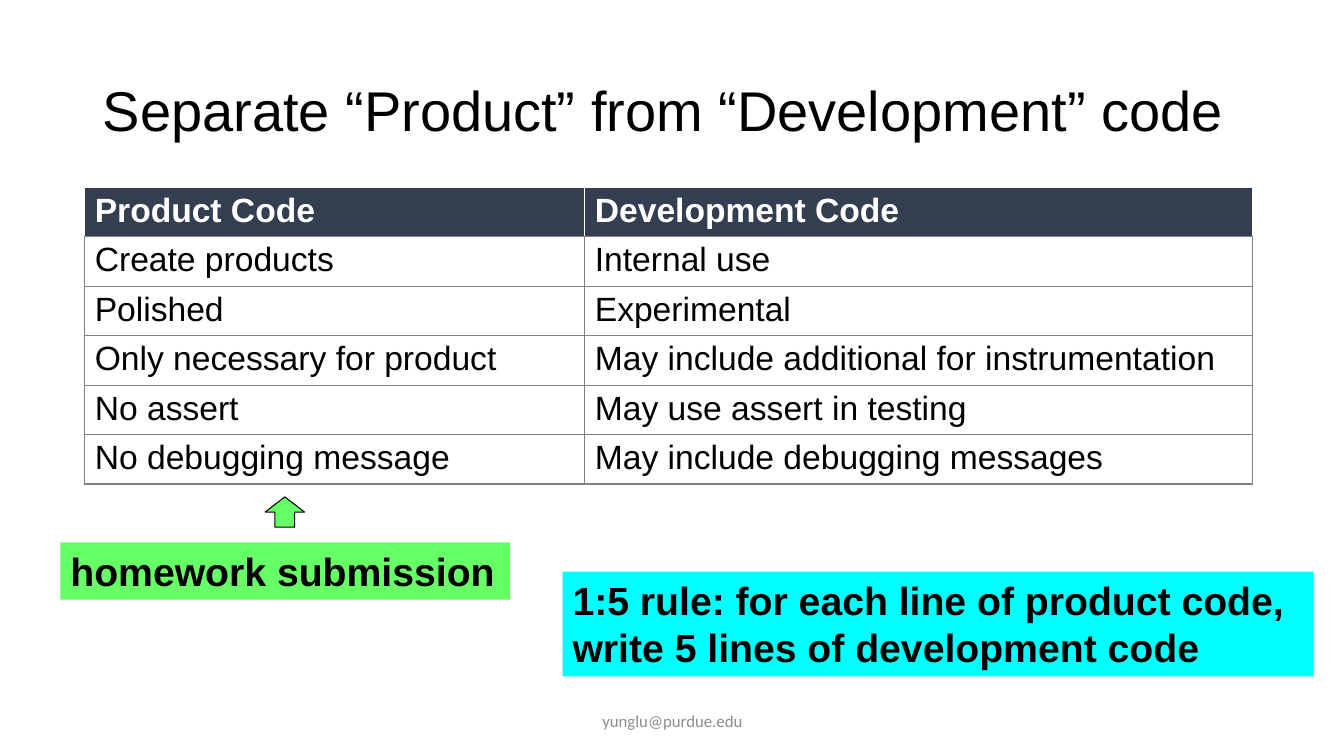
from pptx import Presentation
from pptx.dml.color import RGBColor
from pptx.enum.shapes import MSO_SHAPE as Shape
from pptx.enum.text import MSO_ANCHOR as Anchor, PP_ALIGN as Align
from pptx.oxml import parse_xml
from pptx.oxml.ns import nsdecls
from pptx.util import Inches, Pt

BLACK = RGBColor(0, 0, 0)
WHITE = RGBColor(255, 255, 255)
GRAY = RGBColor(0x80, 0x80, 0x80)
PALE = RGBColor(0x8C, 0x8C, 0x8C)
NAVY = RGBColor(0x33, 0x3F, 0x50)
GREEN = RGBColor(0x66, 0xFF, 0x66)
CYAN = RGBColor(0, 255, 255)

TITLE = "Separate “Product” from “Development” code"
FOOTER = "yunglu@purdue.edu"
ROWS = [
    ("Product Code", "Development Code"),
    ("Create products", "Internal use"),
    ("Polished", "Experimental"),
    ("Only necessary for product", "May include additional for instrumentation"),
    ("No assert", "May use assert in testing"),
    ("No debugging message", "May include debugging messages"),
]
WIDTHS = (4.96, 6.62)
ROW = 0.47
NOTES = [
    ((0.6, 5.38, 4.46, 0.57), GREEN, ["homework submission"]),
    ((5.58, 5.67, 7.45, 1.04), CYAN,
     ["1:5 rule: for each line of product code,", "write 5 lines of development code"]),
]


def box(*sides):
    return [Inches(side) for side in sides]


def style(para, size, color=BLACK, bold=False, face="Arial"):
    font = para.font
    font.name, font.size, font.bold = face, Pt(size), bold
    font.color.rgb = color


def border(cell, head):
    props = cell._tc.get_or_add_tcPr()
    for side in "LRTB":
        color = WHITE if head and side != "B" else GRAY
        props.append(parse_xml(
            f'<a:ln{side} {nsdecls("a")} w="12700"><a:solidFill>'
            f'<a:srgbClr val="{color}"/></a:solidFill></a:ln{side}>'))


def add_block(slide, kind, place, color):
    block = slide.shapes.add_shape(kind, *box(*place))
    block.shadow.inherit = False
    block.fill.solid()
    block.fill.fore_color.rgb = color
    return block


def add_grid(slide):
    frame = slide.shapes.add_table(
        len(ROWS), len(WIDTHS), *box(0.84, 1.86, sum(WIDTHS), ROW * len(ROWS)))
    table = frame.table
    for col, width in zip(table.columns, WIDTHS):
        col.width = Inches(width)
    for r, row in enumerate(ROWS):
        head = r == 0
        for c, text in enumerate(row):
            cell = table.cell(r, c)
            cell.text = text
            cell.margin_top = cell.margin_bottom = Pt(3.25)
            style(cell.text_frame.paragraphs[0], 24, WHITE if head else BLACK, head)
            border(cell, head)
            if head:
                cell.fill.solid()
                cell.fill.fore_color.rgb = NAVY
            else:
                cell.fill.background()


def main():
    deck = Presentation()
    deck.slide_width, deck.slide_height = box(13.33, 7.5)
    slide = deck.slides.add_slide(deck.slide_layouts[5])

    title = slide.shapes.title
    title.left, title.top, title.width, title.height = box(0.92, 0.4, 11.5, 1.45)
    title.text = TITLE
    title.text_frame.vertical_anchor = Anchor.MIDDLE
    para = title.text_frame.paragraphs[0]
    para.alignment, para.line_spacing = Align.LEFT, 0.9
    style(para, 40)

    foot = slide.shapes.add_textbox(*box(4.42, 6.95, 4.5, 0.4)).text_frame
    foot.word_wrap = True
    foot.vertical_anchor = Anchor.MIDDLE
    foot.text = FOOTER
    foot.paragraphs[0].alignment = Align.CENTER
    style(foot.paragraphs[0], 12, PALE, face="Calibri")

    add_grid(slide)

    arrow = add_block(slide, Shape.UP_ARROW, (2.63, 4.93, 0.39, 0.3), GREEN)
    arrow.line.color.rgb = BLACK
    arrow.line.width = Pt(0.75)

    for place, color, lines in NOTES:
        note = add_block(slide, Shape.RECTANGLE, place, color)
        note.line.fill.background()
        frame = note.text_frame
        frame.word_wrap = True
        frame.vertical_anchor = Anchor.TOP
        frame.text = "\n".join(lines)
        for para in frame.paragraphs:
            para.alignment = Align.LEFT
            style(para, 28, bold=True)

    deck.save("out.pptx")


if __name__ == "__main__":
    main()
